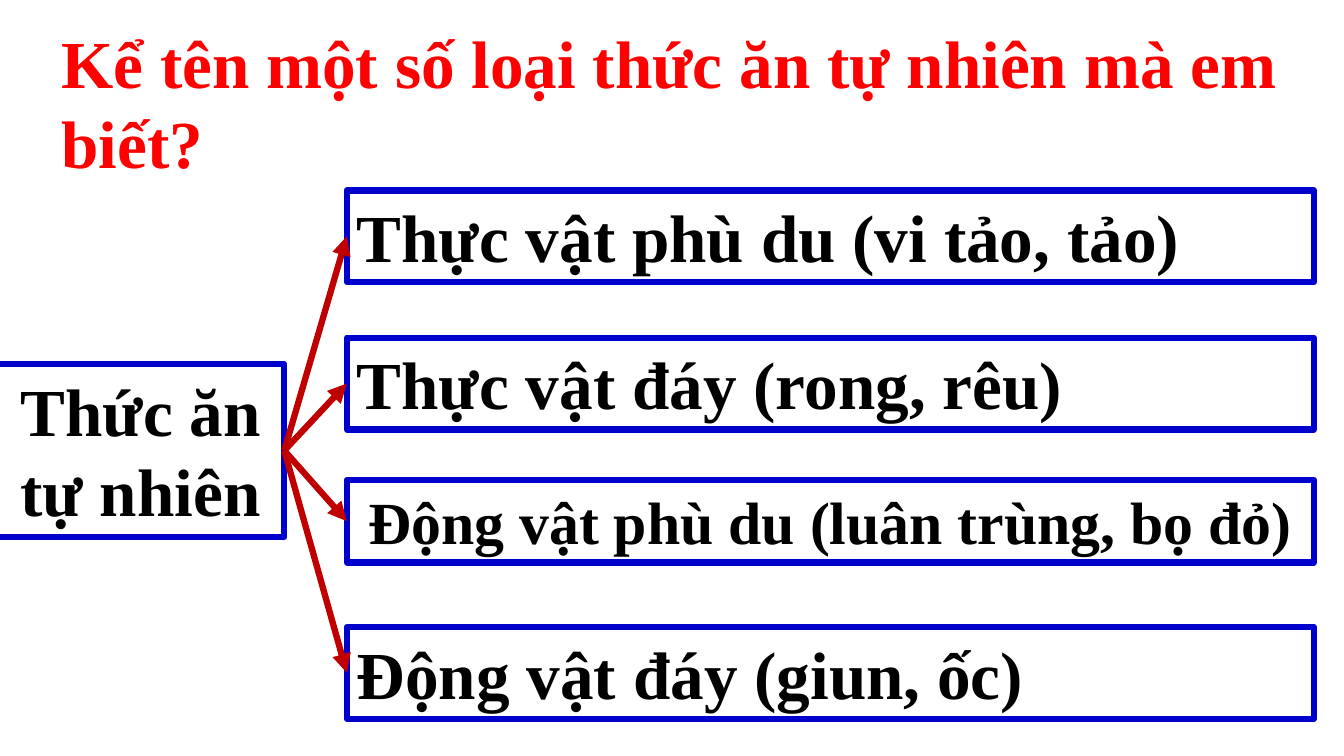
from lxml import etree
from pptx import Presentation
from pptx.dml.color import RGBColor
from pptx.enum.shapes import MSO_CONNECTOR, MSO_SHAPE
from pptx.enum.text import MSO_ANCHOR, MSO_AUTO_SIZE, PP_ALIGN
from pptx.oxml.ns import qn
from pptx.util import Pt

RECTANGLE, STRAIGHT = MSO_SHAPE.RECTANGLE, MSO_CONNECTOR.STRAIGHT
LEFT, CENTER = PP_ALIGN.LEFT, PP_ALIGN.CENTER
LEFT_SIDE, RIGHT_SIDE = 1, 3
PX = 9144  # 100 px to the inch

THEME = {
    "font": "Times New Roman",
    "title": RGBColor(0xFF, 0x00, 0x00),
    "text": RGBColor(0x00, 0x00, 0x00),
    "border": RGBColor(0x00, 0x00, 0xCC),
    "arrow": RGBColor(0xC0, 0x00, 0x00),
    "large": 48,
    "medium": 42.7,
    "stroke": 4.5,
}


def write_text(box, text, color, size, align):
    frame_format = {
        "word_wrap": True,
        "auto_size": MSO_AUTO_SIZE.SHAPE_TO_FIT_TEXT,
        "vertical_anchor": MSO_ANCHOR.TOP,
    }
    for name, value in frame_format.items():
        setattr(box.text_frame, name, value)
    para = box.text_frame.paragraphs[0]
    para.alignment = align
    span = para.add_run()
    span.text = text
    font_format = {"name": THEME["font"], "size": Pt(size), "bold": True}
    for name, value in font_format.items():
        setattr(span.font, name, value)
    span.font.color.rgb = color


def add_bordered_box(page, bounds, text, size, align):
    box = page.shapes.add_shape(RECTANGLE, *[n * PX for n in bounds])
    box.shadow.inherit = False
    box.fill.background()
    box.line.color.rgb = THEME["border"]
    box.line.width = Pt(THEME["stroke"])
    write_text(box, text, THEME["text"], size, align)
    return box


deck = Presentation()
deck.slide_width, deck.slide_height = 1333 * PX, 750 * PX
page = deck.slides.add_slide(deck.slide_layouts[6])

# Main topic
topic = add_bordered_box(
    page, (-3, 361, 285, 172), "Thức ăn tự nhiên", THEME["large"], CENTER
)

# Question
question = page.shapes.add_textbox(*[n * PX for n in (51, 16, 1252, 172)])
write_text(
    question,
    "Kể tên một số loại thức ăn tự nhiên mà em biết?",
    THEME["title"], THEME["large"], LEFT,
)

# Kinds of natural food: top, height, text, size, alignment
kinds = [
    (189, 91, "Thực vật phù du (vi tảo, tảo)", THEME["large"], LEFT),
    (335, 91, "Thực vật đáy (rong, rêu)", THEME["large"], LEFT),
    (476, 82, "Động vật phù du (luân trùng, bọ đỏ)", THEME["medium"], CENTER),
    (622, 91, "Động vật đáy (giun, ốc)", THEME["large"], LEFT),
]
kind_boxes = [
    add_bordered_box(page, (344, top, 959, height), text, size, align)
    for top, height, text, size, align in kinds
]

# Arrows from the topic to each kind
for kind_box in kind_boxes:
    arrow = page.shapes.add_connector(STRAIGHT, 0, 0, 0, 0)
    arrow.begin_connect(topic, RIGHT_SIDE)
    arrow.end_connect(kind_box, LEFT_SIDE)
    arrow.line.color.rgb = THEME["arrow"]
    arrow.line.width = Pt(THEME["stroke"])
    etree.SubElement(arrow.line._get_or_add_ln(), qn("a:tailEnd"), type="triangle")
    etree.SubElement(arrow._element.spPr, qn("a:effectLst"))

deck.save("out.pptx")
